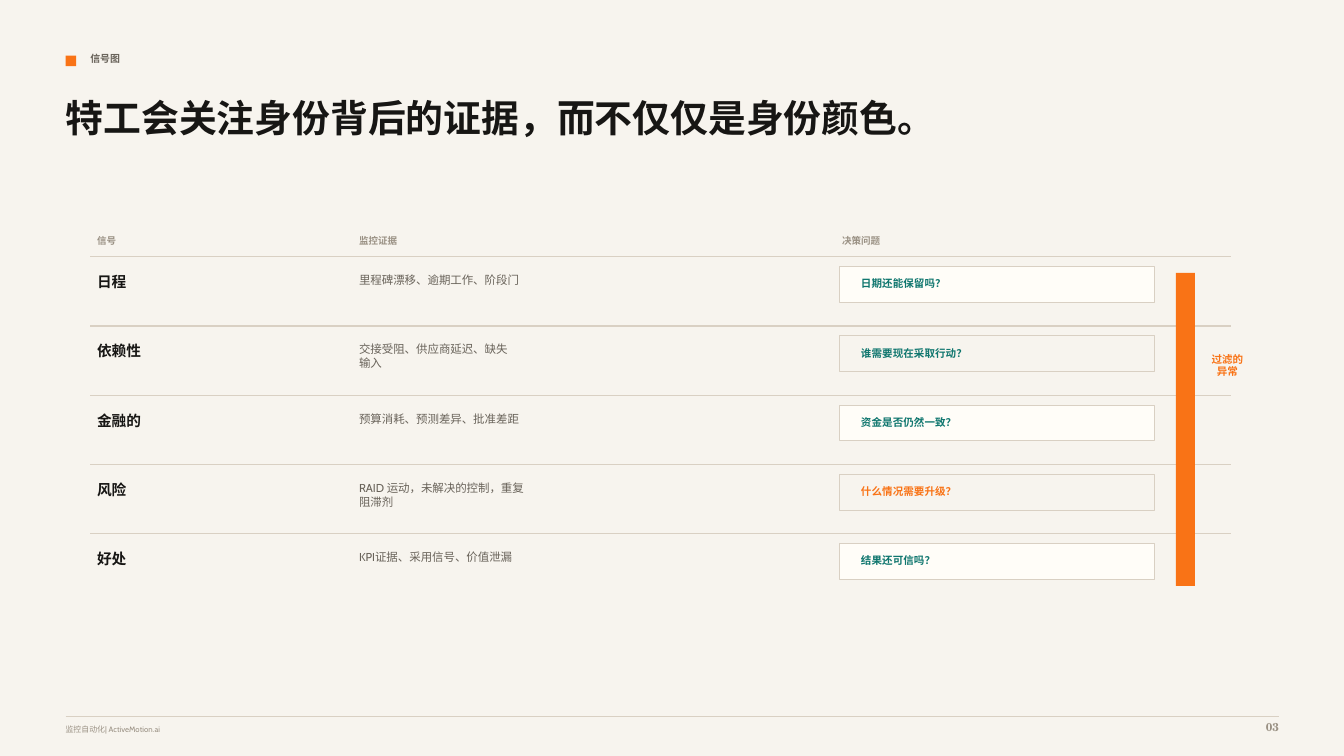
from pptx import Presentation
from pptx.dml.color import RGBColor
from pptx.enum.shapes import MSO_CONNECTOR as CONN, MSO_SHAPE as SHAPE
from pptx.enum.text import MSO_ANCHOR as ANCHOR, MSO_AUTO_SIZE as AUTO, PP_ALIGN as ALIGN
from pptx.oxml.ns import qn
from pptx.util import Inches, Pt
from lxml.etree import SubElement

PAPER, CARD, RULE = "F7F4EE", "FFFDF8", "D9D0C3"
INK, BODY, MUTED = "171614", "69635A", "9A9184"
ORANGE, TEAL = "F97316", "0F766E"
SANS, SERIF = "Cabin", "TeX Gyre Schola"
COLS, ROWS = 128, 72

MARGIN, TABLE_X, TABLE_W = 6.25, 8.6, 108.6
SIGNAL_X, EVIDENCE_X, DECISION_X = 9.25, 34.2, 80
TABLE_Y, ROW_H = 24.4, 6.6

HEADERS = [(SIGNAL_X, 16, "信号"), (EVIDENCE_X, 31, "监控证据"), (DECISION_X + 0.2, 28, "决策问题")]
SIGNALS = [
    ("日程", "里程碑漂移、逾期工作、阶段门", "日期还能保留吗？", TEAL),
    ("依赖性", "交接受阻、供应商延迟、缺失\n输入", "谁需要现在采取行动？", TEAL),
    ("金融的", "预算消耗、预测差异、批准差距", "资金是否仍然一致？", TEAL),
    ("风险", "RAID 运动，未解决的控制，重复\n阻滞剂", "什么情况需要升级？", ORANGE),
    ("好处", "KPI证据、采用信号、价值泄漏", "结果还可信吗？", TEAL),
]


def rgb(color):
    return RGBColor.from_string(color)


class Deck:
    """Holds the current slide; lengths are columns and rows of its grid."""

    def __init__(self):
        self.prs = Presentation()
        self.prs.slide_width, self.prs.slide_height = Inches(13.33), Inches(7.5)
        self.s = self.prs.slides.add_slide(self.prs.slide_layouts[5])
        fill = self.s.background.fill
        fill.solid()
        fill.fore_color.rgb = rgb(PAPER)

    def grid(self, x, y, w, h):
        col, row = self.prs.slide_width / COLS, self.prs.slide_height / ROWS
        return int(x * col), int(y * row), int(w * col), int(h * row)

    def set_text(self, sp, text, size, color, bold=True, font=SANS, align=ALIGN.LEFT):
        tf = sp.text_frame
        tf.text = text
        tf.word_wrap, tf.auto_size, tf.vertical_anchor = True, AUTO.NONE, ANCHOR.TOP
        tf.margin_left = tf.margin_top = tf.margin_right = tf.margin_bottom = 0
        for p in tf.paragraphs:
            p.alignment = align
            p.font.name, p.font.size, p.font.bold = font, Pt(size), bold
            p.font.color.rgb = rgb(color)

    def title(self, x, y, w, h, text, size):
        sp = self.s.shapes.title
        sp.left, sp.top, sp.width, sp.height = self.grid(x, y, w, h)
        self.set_text(sp, text, size, INK, font=SERIF)

    def text(self, x, y, w, h, text, size, color, **style):
        sp = self.s.shapes.add_textbox(*self.grid(x, y, w, h))
        self.set_text(sp, text, size, color, **style)

    def box(self, x, y, w, h, fill=None, line=None):
        sp = self.s.shapes.add_shape(SHAPE.RECTANGLE, *self.grid(x, y, w, h))
        sp.shadow.inherit = False
        if fill:
            sp.fill.solid()
            sp.fill.fore_color.rgb = rgb(fill)
        else:
            sp.fill.background()
        if line:
            sp.line.color.rgb, sp.line.width = rgb(line), Pt(0.75)
        else:
            sp.line.fill.background()

    def rule(self, x, y, w):
        left, top, width, _ = self.grid(x, y, w, 0)
        line = self.s.shapes.add_connector(CONN.STRAIGHT, left, top, left + width, top)
        line.line.color.rgb, line.line.width = rgb(RULE), Pt(0.75)
        SubElement(line._element.spPr, qn("a:effectLst"))


def signal_row(deck, i, signal, evidence, question, color):
    y = TABLE_Y + i * ROW_H
    deck.rule(TABLE_X, y + 0.05, TABLE_W)
    deck.text(SIGNAL_X, y + 1.6, 18, 1.8, signal, 10.5, INK)
    deck.text(EVIDENCE_X, y + 1.6, 36, 3.4, evidence, 8.2, BODY, bold=False)
    deck.box(DECISION_X, y + 1, 30, 3.4, None if i % 2 else CARD, RULE)
    deck.text(DECISION_X + 2, y + 2, 26, 1.5, question, 7.5, color)


def main():
    deck = Deck()
    deck.box(MARGIN, 5.3, 1, 1, ORANGE)
    deck.text(TABLE_X, 5, 52, 1.8, "信号图", 7.1, BODY)
    deck.title(MARGIN, 9, 85, 10, "特工会关注身份背后的证据，而不仅仅是身份颜色。", 27)

    for x, w, header in HEADERS:
        deck.text(x, 22.4, w, 1.6, header, 6.8, MUTED)
    for i, row in enumerate(SIGNALS):
        signal_row(deck, i, *row)

    deck.box(112, 26, 1.8, 29.8, ORANGE)
    deck.text(115.2, 33.6, 3.4, 13.2, "过滤的异常", 7.5, ORANGE, align=ALIGN.CENTER)

    deck.rule(MARGIN, 68.2, 115.6)
    deck.text(MARGIN, 69, 76, 1.4, "监控自动化| ActiveMotion.ai", 5.6, MUTED, bold=False)
    deck.text(117, 68.6, 4.8, 1.8, "03", 8.2, MUTED, font=SERIF, align=ALIGN.RIGHT)
    deck.prs.save("out.pptx")


if __name__ == "__main__":
    main()
